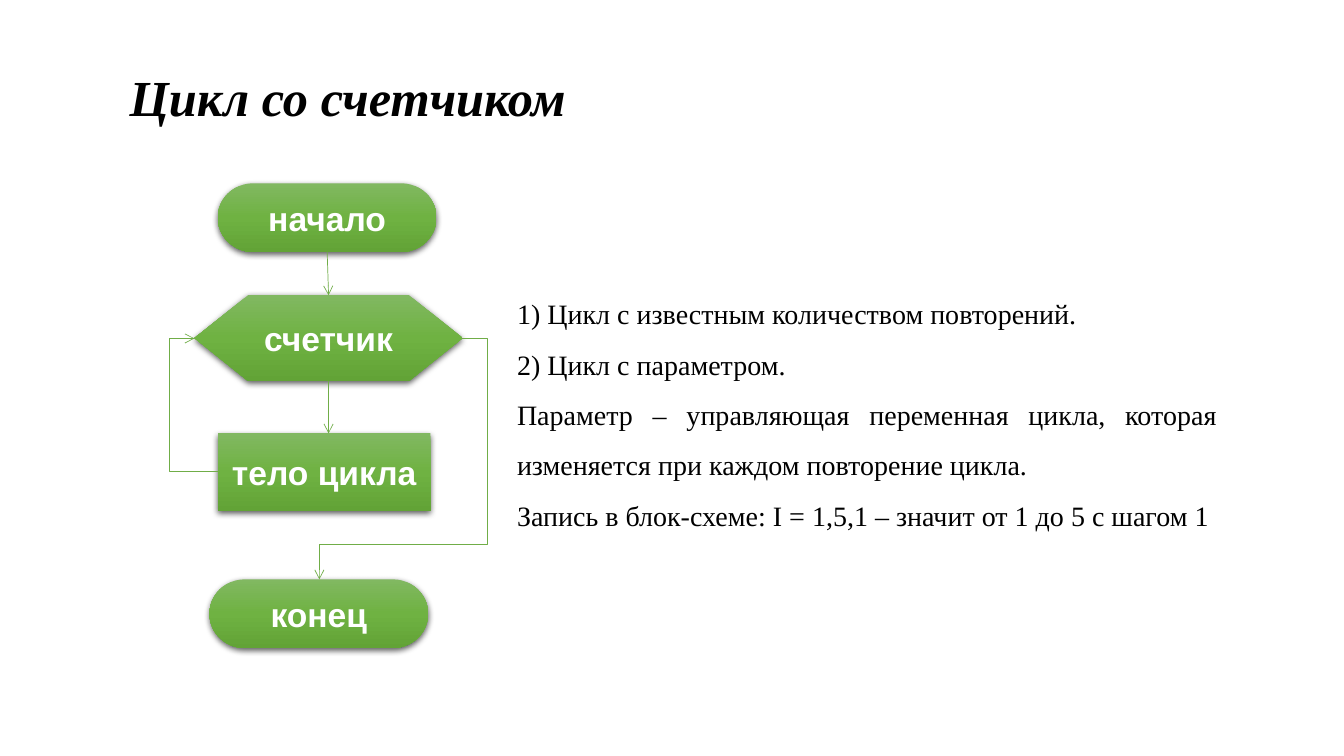
"""Build a slide that explains the counter loop with a flowchart."""
from copy import deepcopy

from lxml import etree
from pptx import Presentation
from pptx.dml.color import RGBColor
from pptx.enum.shapes import MSO_CONNECTOR, MSO_SHAPE
from pptx.enum.text import MSO_ANCHOR, MSO_AUTO_SIZE, PP_ALIGN
from pptx.oxml.ns import qn
from pptx.util import Cm, Pt

BLACK = RGBColor(0x00, 0x00, 0x00)
WHITE = RGBColor(0xFF, 0xFF, 0xFF)
LINE_GREEN = RGBColor(0x70, 0xAD, 0x47)
GRADIENT = [
    (0, RGBColor(0x81, 0xB8, 0x61)),
    (0.5, RGBColor(0x6F, 0xB2, 0x42)),
    (1, RGBColor(0x62, 0xA3, 0x36)),
]
TERMINATOR = MSO_SHAPE.FLOWCHART_TERMINATOR
PREPARATION = MSO_SHAPE.FLOWCHART_PREPARATION
PROCESS = MSO_SHAPE.FLOWCHART_PROCESS
STRAIGHT, ELBOW = MSO_CONNECTOR.STRAIGHT, MSO_CONNECTOR.ELBOW
CENTER, JUSTIFY = PP_ALIGN.CENTER, PP_ALIGN.JUSTIFY
MIDDLE = MSO_ANCHOR.MIDDLE
FIT_SHAPE = MSO_AUTO_SIZE.SHAPE_TO_FIT_TEXT
TOP, BOTTOM = 0, 2

TITLE_FONT = {"name": "Times New Roman", "size": Pt(36), "bold": True, "italic": True}
BODY_FONT = {"name": "Times New Roman", "size": Pt(20)}
BLOCK_FONT = {"name": "Arial", "size": Pt(24), "bold": True}


def write_paragraph(paragraph, text, alignment, color, font_format):
    paragraph.text = text
    paragraph.alignment = alignment
    for attribute, value in font_format.items():
        setattr(paragraph.font, attribute, value)
    paragraph.font.color.rgb = color


def add_arrow(kind, start, end):
    arrow = slide.shapes.add_connector(kind, *map(Cm, start + end))
    arrow.line.color.rgb = LINE_GREEN
    arrow.line.width = Pt(0.5)
    etree.SubElement(arrow.line._get_or_add_ln(), qn("a:tailEnd"), type="arrow")
    etree.SubElement(arrow._element.spPr, qn("a:effectLst"))
    return arrow


presentation = Presentation()
presentation.slide_width = Cm(33.87)
presentation.slide_height = Cm(19.05)
slide = presentation.slides.add_slide(presentation.slide_layouts[6])

texts = [
    ((3.02, 0.79, 27.48, 2.29), TITLE_FONT, ["Цикл со счетчиком"]),
    ((12.78, 6.93, 18.14, 6.68), BODY_FONT, [
        "1) Цикл с известным количеством повторений.",
        "2) Цикл с параметром.",
        "Параметр – управляющая переменная цикла, которая изменяется при каждом повторение цикла.",
        "Запись в блок-схеме: I = 1,5,1 – значит от 1 до 5 с шагом 1",
    ]),
]
for position, font_format, lines in texts:
    frame = slide.shapes.add_textbox(*map(Cm, position)).text_frame
    frame.word_wrap = True
    frame.auto_size = FIT_SHAPE
    for index, line in enumerate(lines):
        paragraph = frame.add_paragraph() if index else frame.paragraphs[0]
        write_paragraph(paragraph, line, JUSTIFY, BLACK, font_format)
        paragraph.line_spacing = 1.5

blocks = {}
for text, kind, position in [
    ("начало", TERMINATOR, (5.49, 4.62, 5.51, 1.73)),
    ("счетчик", PREPARATION, (4.9, 7.44, 6.76, 2.16)),
    ("тело цикла", PROCESS, (5.49, 10.92, 5.36, 1.96)),
    ("конец", TERMINATOR, (5.28, 14.6, 5.51, 1.73)),
]:
    shape = slide.shapes.add_shape(kind, *map(Cm, position))
    shape.line.fill.background()
    shape.fill.gradient()
    shape.fill.gradient_angle = 270
    stop_list = shape._element.spPr.find(".//" + qn("a:gsLst"))
    stop_list.append(deepcopy(stop_list[0]))
    for stop, (offset, color) in zip(shape.fill.gradient_stops, GRADIENT):
        stop.position = offset
        stop.color.rgb = color
    shape.shadow.inherit = False
    shadow = etree.SubElement(
        shape._element.spPr.find(qn("a:effectLst")), qn("a:outerShdw"),
        blurRad=str(Pt(4.5)), dist=str(Pt(1.5)), dir="5400000", algn="ctr", rotWithShape="0")
    shadow_color = etree.SubElement(shadow, qn("a:srgbClr"), val=str(BLACK))
    etree.SubElement(shadow_color, qn("a:alpha"), val="63000")
    shape.text_frame.vertical_anchor = MIDDLE
    write_paragraph(shape.text_frame.paragraphs[0], text, CENTER, WHITE, BLOCK_FONT)
    blocks[text] = shape

for start, end, preset, adjustments in [
    ((5.49, 11.89), (4.9, 8.53), "bentConnector3", [206700]),
    ((11.65, 8.53), (8.05, 14.6), "bentConnector4", [-17600, 85600]),
]:
    geometry = add_arrow(ELBOW, start, end)._element.spPr.find(qn("a:prstGeom"))
    geometry.set("prst", preset)
    guides = geometry.find(qn("a:avLst"))
    names = ["adj"] if preset == "bentConnector2" else ["adj1", "adj2"]
    for name, value in zip(names, adjustments):
        etree.SubElement(guides, qn("a:gd"), name=name, fmla=f"val {value}")

start_arrow = add_arrow(STRAIGHT, (8.25, 6.35), (8.25, 7.44))
start_arrow.begin_connect(blocks["начало"], BOTTOM)
start_arrow.end_connect(blocks["счетчик"], TOP)
body_arrow = add_arrow(STRAIGHT, (8.28, 9.6), (8.28, 10.92))
body_arrow.begin_connect(blocks["счетчик"], BOTTOM)

presentation.save("out.pptx")
